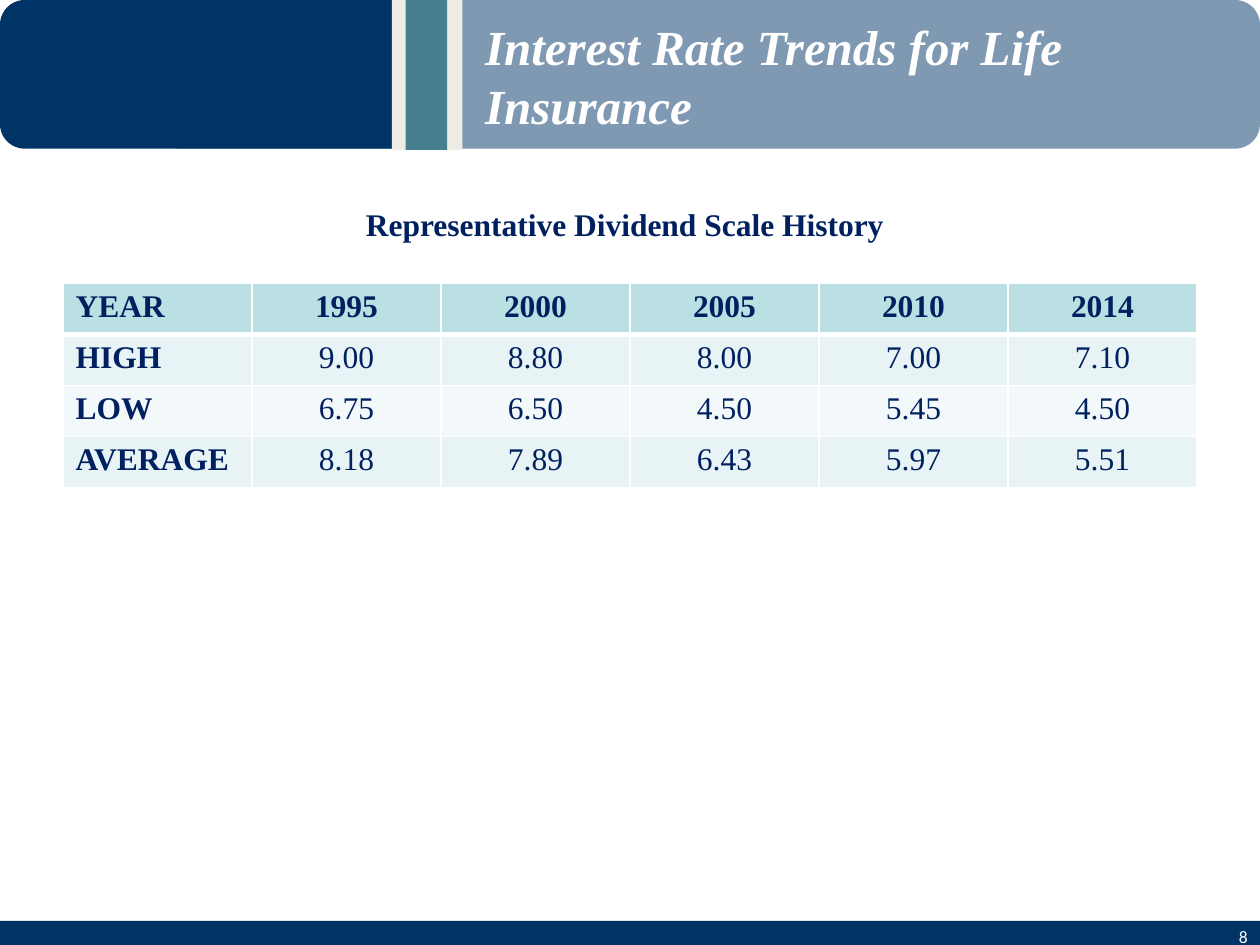
from dataclasses import dataclass

from lxml import etree
from pptx import Presentation
from pptx import util as u
from pptx.dml.color import RGBColor
from pptx.enum import shapes, text
from pptx.oxml import ns


@dataclass(frozen=True)
class Theme:
    navy: str = "003366"
    slate: str = "8099B3"
    teal: str = "487F8F"
    cream: str = "EEECE4"
    white: str = "FFFFFF"
    ink: str = "002060"
    header: str = "BBE0E3"
    stripes: tuple[str, str] = ("E7F3F4", "F3F9FA")
    serif: str = "Times New Roman"
    sans: str = "Calibri"
    title_size: int = 28
    body_size: int = 18
    number_size: int = 10


@dataclass(frozen=True)
class Box:
    left: float
    top: float
    width: float
    height: float

    def lengths(self) -> tuple:
        return tuple(map(u.Inches, (self.left, self.top, self.width, self.height)))


@dataclass(frozen=True)
class Band:
    box: Box
    color: str
    outline: shapes.MSO_SHAPE = shapes.MSO_SHAPE.RECTANGLE


THEME = Theme()
ROUNDED = shapes.MSO_SHAPE.ROUNDED_RECTANGLE
BANDS = [
    Band(Box(1.23, 0, 8.77, 1.18), THEME.slate, ROUNDED),
    Band(Box(0, 0, 3.56, 1.18), THEME.navy, ROUNDED),
    Band(Box(0, 7.31, 10, 0.26), THEME.navy),
    Band(Box(3.11, 0, 0.56, 1.19), THEME.cream),
    Band(Box(3.22, 0, 0.33, 1.19), THEME.teal),
]
DIVIDENDS = [
    ["YEAR", "1995", "2000", "2005", "2010", "2014"],
    ["HIGH", "9.00", "8.80", "8.00", "7.00", "7.10"],
    ["LOW", "6.75", "6.50", "4.50", "5.45", "4.50"],
    ["AVERAGE", "8.18", "7.89", "6.43", "5.97", "5.51"],
]


def style(paragraph, size: int, color: str, align, face: str = THEME.serif,
          bold: bool = True, italic: bool = False) -> None:
    paragraph.alignment = align
    font = paragraph.font
    font.name, font.size = face, u.Pt(size)
    font.bold, font.italic = bold, italic
    font.color.rgb = RGBColor.from_string(color)


def draw_band(slide, band: Band) -> None:
    shape = slide.shapes.add_shape(band.outline, *band.box.lengths())
    shape.shadow.inherit = False
    shape.fill.solid()
    shape.fill.fore_color.rgb = RGBColor.from_string(band.color)
    shape.line.fill.background()


def add_label(slide, box: Box, words: str):
    frame = slide.shapes.add_textbox(*box.lengths()).text_frame
    frame.word_wrap = True
    frame.text = words
    return frame.paragraphs[0]


def set_borders(cell, widths: dict[str, int]) -> None:
    properties = cell._tc.get_or_add_tcPr()
    for side, width in widths.items():
        line = etree.SubElement(properties, ns.qn(f"a:ln{side}"), w=str(u.Pt(width)))
        fill = etree.SubElement(line, ns.qn("a:solidFill"))
        etree.SubElement(fill, ns.qn("a:srgbClr"), val=THEME.white)


def draw_dividends(slide, box: Box) -> None:
    rows, columns = len(DIVIDENDS), len(DIVIDENDS[0])
    table = slide.shapes.add_table(rows, columns, *box.lengths()).table
    for r, values in enumerate(DIVIDENDS):
        color = THEME.header if r == 0 else THEME.stripes[(r - 1) % 2]
        for c, value in enumerate(values):
            cell = table.cell(r, c)
            # A heavier rule separates the header from the rates
            set_borders(cell, {"L": 1, "R": 1, "T": 3 if r == 1 else 1,
                               "B": 3 if r == 0 else 1})
            cell.fill.solid()
            cell.fill.fore_color.rgb = RGBColor.from_string(color)
            cell.text = value
            align = text.PP_ALIGN.CENTER if c else text.PP_ALIGN.LEFT
            style(cell.text_frame.paragraphs[0], THEME.body_size, THEME.ink,
                  align, bold=r == 0 or c == 0)


def main() -> None:
    deck = Presentation()
    deck.slide_width, deck.slide_height = u.Inches(10), u.Inches(7.5)
    slide = deck.slides.add_slide(deck.slide_layouts[5])

    # Header and footer bands
    for band in BANDS:
        draw_band(slide, band)

    # Title, brought in front of the bands
    title = slide.shapes.title
    title.left, title.top, title.width, title.height = Box(3.75, 0.08, 6.25, 1.04).lengths()
    title.text_frame.text = "Interest Rate Trends for Life Insurance"
    title.text_frame.vertical_anchor = text.MSO_ANCHOR.TOP
    style(title.text_frame.paragraphs[0], THEME.title_size, THEME.white,
          text.PP_ALIGN.LEFT, italic=True)
    slide.shapes._spTree.append(title._element)

    # Page number
    number = add_label(slide, Box(0, 7.3, 10, 0.27), "8")
    style(number, THEME.number_size, THEME.white, text.PP_ALIGN.RIGHT,
          face=THEME.sans, bold=False)

    # Dividend table and its heading
    draw_dividends(slide, Box(0.5, 2.25, 9, 1.62))
    heading = add_label(slide, Box(1.75, 1.58, 6.42, 0.4),
                        "Representative Dividend Scale History")
    style(heading, THEME.body_size, THEME.ink, text.PP_ALIGN.CENTER)

    deck.save("out.pptx")


if __name__ == "__main__":
    main()
